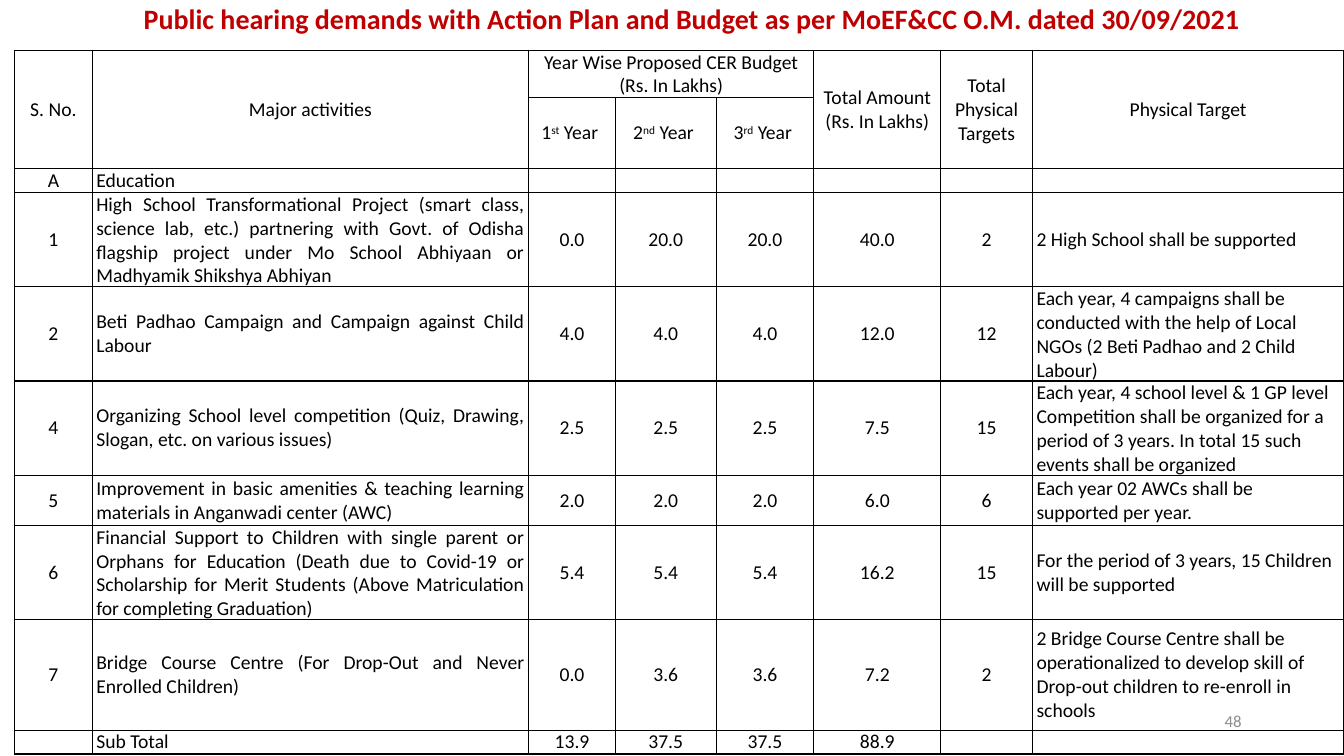
from lxml.etree import SubElement
from pptx import Presentation
from pptx.dml.color import RGBColor
from pptx.enum.text import MSO_ANCHOR as Anchor, PP_ALIGN as Align
from pptx.oxml.ns import qn
from pptx.util import Pt

FONT = "Calibri"
BLACK = "000000"
COLUMN_WIDTHS = [55.4, 311.8, 61.9, 72, 69.8, 90.7, 65.5, 222.5]
ROW_HEIGHTS = [33.5, 51, 17, 67, 67, 67, 36, 67, 79, 17]
HEADINGS = ["S. No.", "Major activities", "Year Wise Proposed CER Budget (Rs. In Lakhs)",
            "", "", "Total Amount (Rs. In Lakhs)", "Total Physical Targets", "Physical Target"]
YEARS = [("1", "st"), ("2", "nd"), ("3", "rd")]
ACTIVITIES = [
    ["A", "Education", "", "", "", "", "", ""],
    ["1", "High School Transformational Project (smart class, science lab, etc.) partnering "
     "with Govt. of Odisha flagship project under Mo School Abhiyaan or Madhyamik Shikshya Abhiyan",
     "0.0", "20.0", "20.0", "40.0", "2", "2 High School shall be supported"],
    ["2", "Beti Padhao Campaign and Campaign against Child Labour",
     "4.0", "4.0", "4.0", "12.0", "12",
     "Each year, 4 campaigns shall be conducted with the help of Local NGOs "
     "(2 Beti Padhao and 2 Child Labour)"],
    ["4", "Organizing School level competition (Quiz, Drawing, Slogan, etc. on various issues)",
     "2.5", "2.5", "2.5", "7.5", "15",
     "Each year, 4 school level & 1 GP level Competition shall be organized for a period "
     "of 3 years. In total 15 such events shall be organized"],
    ["5", "Improvement in basic amenities & teaching learning materials in Anganwadi center (AWC)",
     "2.0", "2.0", "2.0", "6.0", "6", "Each year 02 AWCs shall be supported per year."],
    ["6", "Financial Support to Children with single parent or Orphans for Education "
     "(Death due to Covid-19 or Scholarship for Merit Students "
     "(Above Matriculation for completing Graduation)",
     "5.4", "5.4", "5.4", "16.2", "15",
     "For the period of 3 years, 15 Children will be supported"],
    ["7", "Bridge Course Centre (For Drop-Out and Never Enrolled Children)",
     "0.0", "3.6", "3.6", "7.2", "2",
     "2 Bridge Course Centre shall be operationalized to develop skill of "
     "Drop-out children to re-enroll in schools"],
    ["", "Sub Total", "13.9", "37.5", "37.5", "88.9", "", ""],
]
BODY_ALIGNMENTS = [Align.CENTER, Align.JUSTIFY] + [Align.CENTER] * 5 + [Align.LEFT]


def color(hex_string):
    return RGBColor.from_string(hex_string)


def style_paragraph(paragraph, size, hex_string, alignment, bold=False):
    paragraph.alignment = alignment
    font = paragraph.font
    font.name, font.size, font.bold = FONT, Pt(size), bold
    font.color.rgb = color(hex_string)


def add_text(slide, text, box, size, hex_string, alignment, anchor, bold=False):
    shape = slide.shapes.add_textbox(*map(Pt, box))
    frame = shape.text_frame
    frame.word_wrap = True
    frame.vertical_anchor = anchor
    frame.text = text
    style_paragraph(frame.paragraphs[0], size, hex_string, alignment, bold)


def add_borders(cell):
    properties = cell._tc.get_or_add_tcPr()
    for side in ("lnL", "lnR", "lnT", "lnB"):
        line = SubElement(properties, qn(f"a:{side}"), w=str(Pt(1)))
        fill = SubElement(line, qn("a:solidFill"))
        SubElement(fill, qn("a:srgbClr"), val=BLACK)


def format_cell(cell, alignment):
    cell.margin_left = cell.margin_right = Pt(2.9)
    cell.margin_top = cell.margin_bottom = 0
    cell.vertical_anchor = Anchor.MIDDLE
    add_borders(cell)
    cell.fill.background()
    paragraph = cell.text_frame.paragraphs[0]
    style_paragraph(paragraph, 14, BLACK, alignment)
    if not cell.text:
        # An empty cell takes its line height from the end mark
        SubElement(paragraph._p, qn("a:endParaRPr"), sz="1400")


def write_year(cell, number, suffix):
    paragraph = cell.text_frame.paragraphs[0]
    for text in (number, suffix, " Year "):
        run = paragraph.add_run()
        run.text = text
        if text == suffix:
            run._r.get_or_add_rPr().set("baseline", "30000")


def add_budget_table(slide):
    frame = slide.shapes.add_table(len(ROW_HEIGHTS), len(COLUMN_WIDTHS), Pt(10.5), Pt(36),
                                   Pt(sum(COLUMN_WIDTHS)), Pt(sum(ROW_HEIGHTS)))
    table = frame.table
    table.first_row = table.horz_banding = False
    for column, width in zip(table.columns, COLUMN_WIDTHS):
        column.width = Pt(width)
    for row, height in zip(table.rows, ROW_HEIGHTS):
        row.height = Pt(height)

    for row_index, texts in enumerate([HEADINGS, [""] * len(HEADINGS)] + ACTIVITIES):
        for column_index, text in enumerate(texts):
            cell = table.cell(row_index, column_index)
            if text:
                cell.text = text
            if row_index == 1 and 2 <= column_index <= 4:
                write_year(cell, *YEARS[column_index - 2])
            is_heading = row_index < 2
            format_cell(cell, Align.CENTER if is_heading else BODY_ALIGNMENTS[column_index])

    for label in ("Education", "Sub Total"):
        row_index = 2 + [activity[1] for activity in ACTIVITIES].index(label)
        table.cell(row_index, 1).text_frame.paragraphs[0].alignment = Align.LEFT
    table.cell(0, 2).merge(table.cell(0, 4))
    for column_index in (0, 1, 5, 6, 7):
        table.cell(0, column_index).merge(table.cell(1, column_index))


def main():
    presentation = Presentation()
    presentation.slide_width, presentation.slide_height = Pt(960), Pt(540)
    slide = presentation.slides.add_slide(presentation.slide_layouts[6])
    add_text(slide, "Public hearing demands with Action Plan and Budget as per "
             "MoEF&CC O.M. dated 30/09/2021", (-17.3, -2.2, 1023, 31.5),
             20, "C00000", Align.CENTER, Anchor.TOP, bold=True)
    add_text(slide, "48", (678, 500.5, 216, 28.8), 12, "8C8C8C", Align.RIGHT, Anchor.MIDDLE)
    add_budget_table(slide)
    presentation.save("out.pptx")


if __name__ == "__main__":
    main()
